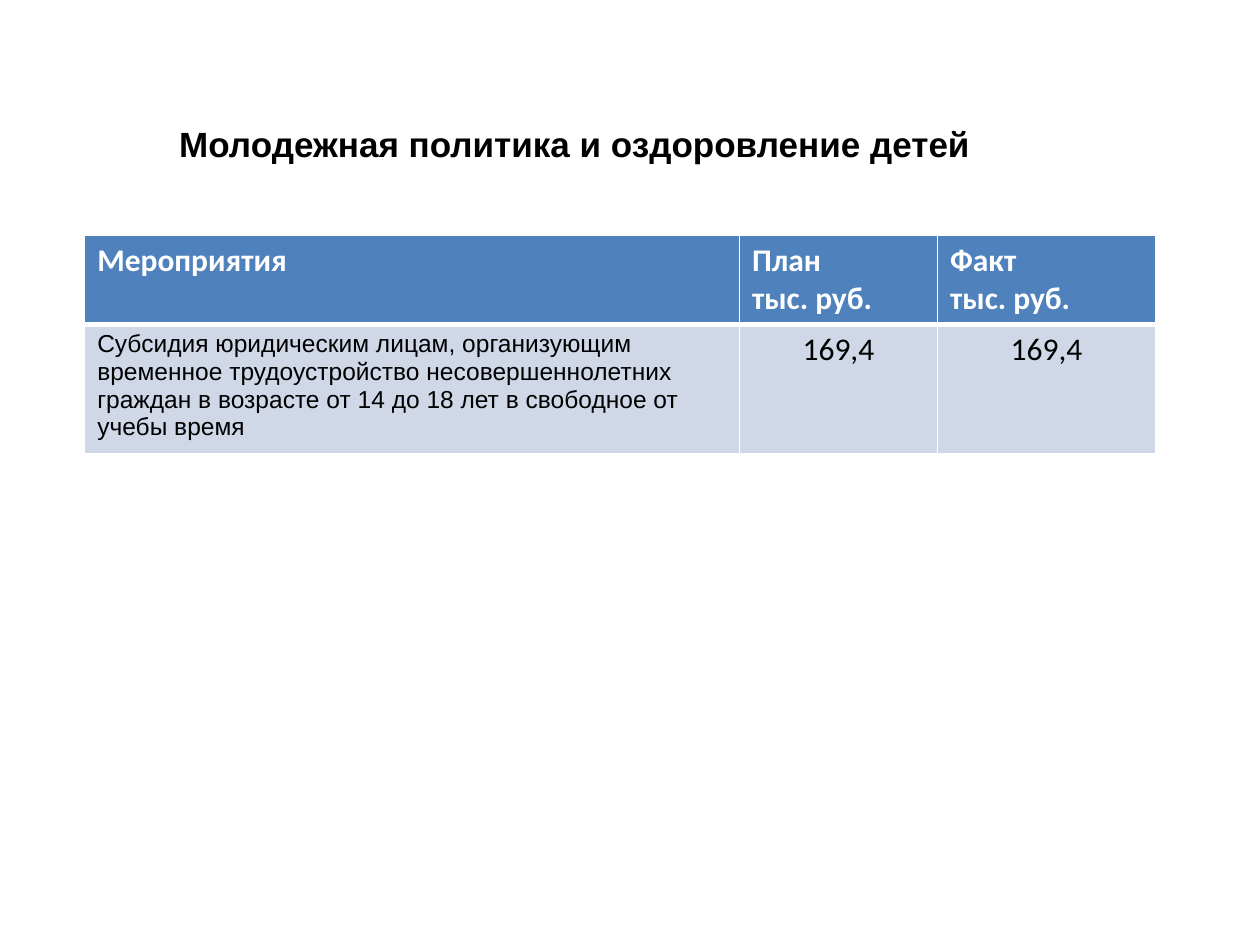
from pptx import Presentation
from pptx.dml.color import RGBColor
from pptx.enum.text import MSO_ANCHOR as Anchor, MSO_AUTO_SIZE as AutoSize, PP_ALIGN as Align
from pptx.oxml.ns import qn
from pptx.util import Pt
from lxml.etree import SubElement

BLACK = RGBColor(0x00, 0x00, 0x00)
WHITE = RGBColor(0xFF, 0xFF, 0xFF)
HEADER_BLUE = RGBColor(0x4F, 0x81, 0xBD)
ROW_BLUE = RGBColor(0xD0, 0xD8, 0xE8)


class SlideBuilder:
    heading_font = "Arial"
    table_font = "Calibri"

    def __init__(self, slide):
        self.slide = slide

    def add_lines(self, frame, lines, font, size, color, bold=False, align=Align.LEFT):
        for number, line in enumerate(lines):
            paragraph = frame.add_paragraph() if number else frame.paragraphs[0]
            paragraph.alignment = align
            run = paragraph.add_run()
            run.text = line
            run.font.name = font
            run.font.size = Pt(size)
            run.font.bold = bold
            run.font.color.rgb = color

    def title(self, text, left, top, width, height, indent):
        heading = self.slide.shapes.title
        heading.left, heading.top = Pt(left), Pt(top)
        heading.width, heading.height = Pt(width), Pt(height)
        frame = heading.text_frame
        frame.word_wrap = True
        frame.auto_size = AutoSize.NONE
        frame.vertical_anchor = Anchor.TOP
        self.add_lines(frame, [text], self.heading_font, 20, BLACK, True, Align.JUSTIFY)
        properties = frame.paragraphs[0]._p.get_or_add_pPr()
        properties.set("marL", "0")
        properties.set("indent", str(Pt(indent)))

    def table(self, left, top, widths, heights):
        table = self.slide.shapes.add_table(
            len(heights), len(widths), Pt(left), Pt(top),
            Pt(sum(widths)), Pt(sum(heights))).table
        for column, width in zip(table.columns, widths):
            column.width = Pt(width)
        for row, height in zip(table.rows, heights):
            row.height = Pt(height)
        return table

    def cell(self, cell, lines, fill, borders, **style):
        self.add_lines(cell.text_frame, lines, **style)
        properties = cell._tc.get_or_add_tcPr()
        for side, width in zip(("a:lnL", "a:lnR", "a:lnT", "a:lnB"), borders):
            line = SubElement(properties, qn(side), w=str(Pt(width)))
            color = SubElement(SubElement(line, qn("a:solidFill")), qn("a:srgbClr"))
            color.set("val", str(WHITE))
        cell.fill.solid()
        cell.fill.fore_color.rgb = fill


def main():
    deck = Presentation()
    deck.slide_width, deck.slide_height = Pt(720), Pt(540)
    builder = SlideBuilder(deck.slides.add_slide(deck.slide_layouts[5]))
    builder.title("Молодежная политика и оздоровление детей", 59.8, 66.5, 572.4, 44.6, 35.4)

    headers = [["Мероприятия"], ["План", "тыс. руб."], ["Факт", "тыс. руб."]]
    measure = ("Субсидия юридическим лицам, организующим временное трудоустройство "
               "несовершеннолетних граждан в возрасте от 14 до 18 лет в свободное "
               "от учебы время")
    amounts = ["169,4", "169,4"]

    budget = builder.table(48.4, 134.2, [374.2, 113.2, 124.6], [50.4, 74.2])
    for column, lines in enumerate(headers):
        builder.cell(budget.cell(0, column), lines, HEADER_BLUE, (1, 1, 1, 3),
                     font=builder.table_font, size=18, color=WHITE, bold=True)
    row_borders = (1, 1, 3, 1)
    builder.cell(budget.cell(1, 0), [measure], ROW_BLUE, row_borders,
                 font=builder.heading_font, size=14, color=BLACK)
    for column, amount in enumerate(amounts, 1):
        builder.cell(budget.cell(1, column), [amount], ROW_BLUE, row_borders,
                     font=builder.table_font, size=18, color=BLACK, align=Align.CENTER)

    deck.save("out.pptx")


if __name__ == "__main__":
    main()
